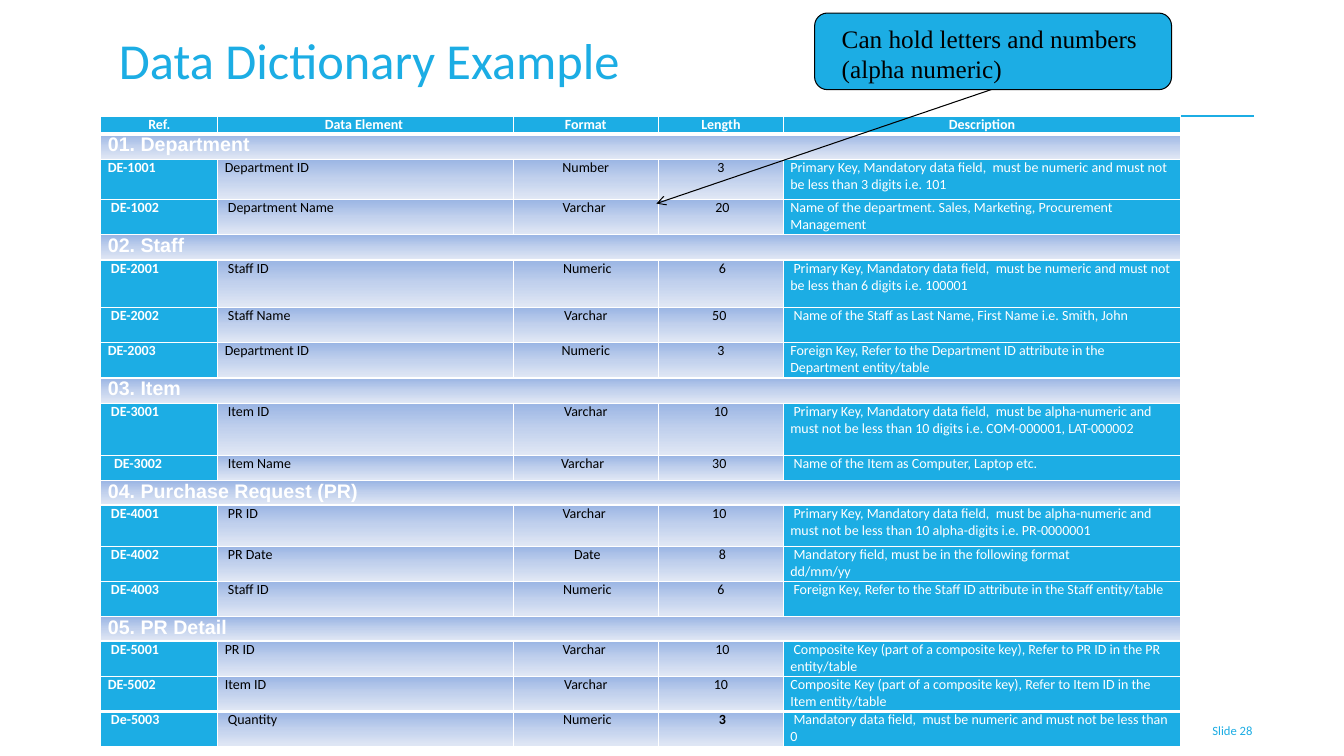
from copy import deepcopy
from dataclasses import dataclass

from lxml import etree
from pptx import Presentation
from pptx import util as u
from pptx.dml.color import RGBColor
from pptx.enum import shapes, text
from pptx.oxml.ns import qn

TITLE = "Data Dictionary Example"
CALLOUT = "Can hold letters and numbers (alpha numeric)"
SLIDE_NUMBER = "Slide 28"
HEADER = ("Ref.", "Data Element ", "Format", "Length", "Description")
ROWS = [
    (18, HEADER),
    (25, ("01. Department",)),
    (40, ("DE-1001", "Department ID", "Number", "3",
          "Primary Key, Mandatory data field,  must be numeric and must not be less than 3 digits i.e. 101")),
    (35, (" DE-1002", " Department Name", "Varchar ", " 20",
          "Name of the department. Sales, Marketing, Procurement Management")),
    (25, ("02. Staff  ",)),
    (47, (" DE-2001", " Staff ID", " Numeric", " 6",
          " Primary Key, Mandatory data field,  must be numeric and must not be less than 6 digits i.e. 100001")),
    (35, (" DE-2002", " Staff Name", " Varchar ", "50 ",
          " Name of the Staff as Last Name, First Name i.e. Smith, John")),
    (35, ("DE-2003", "Department ID", "Numeric", "3",
          "Foreign Key, Refer to the Department ID attribute in the Department entity/table")),
    (25, ("03. Item ",)),
    (52, (" DE-3001", " Item ID", "Varchar", "10",
          " Primary Key, Mandatory data field,  must be alpha-numeric and must not be less than "
          "10 digits i.e. COM-000001, LAT-000002")),
    (25, ("  DE-3002", " Item Name", "Varchar  ", "30 ",
          " Name of the Item as Computer, Laptop etc.")),
    (24, ("04. Purchase Request (PR)",)),
    (41, (" DE-4001", " PR ID", "Varchar ", "10 ",
          " Primary Key, Mandatory data field,  must be alpha-numeric and must not be less than "
          "10 alpha-digits i.e. PR-0000001")),
    (35, (" DE-4002", " PR Date", " Date", " 8",
          " Mandatory field, must be in the following format\ndd/mm/yy")),
    (35, (" DE-4003", " Staff ID", " Numeric", " 6 ",
          " Foreign Key, Refer to the Staff ID attribute in the Staff entity/table")),
    (24, ("05. PR Detail ",)),
    (35, (" DE-5001", "PR ID", "Varchar ", " 10",
          " Composite Key (part of a composite key), Refer to PR ID in the PR entity/table")),
    (35, ("DE-5002", "Item ID", "Varchar", "10",
          "Composite Key (part of a composite key), Refer to Item ID in the Item entity/table")),
    (35, (" De-5003", " Quantity", " Numeric", " 3",
          " Mandatory data field,  must be numeric and must not be less than 0")),
]
COLUMNS = (116, 293, 144, 124, 394)
HEAVY_RULES = (1, len(ROWS) - 1)
BOLD_CELL = (len(ROWS) - 1, 3)


@dataclass(frozen=True)
class Theme:
    blue: str = "1CADE4"
    white: str = "FFFFFF"
    black: str = "000000"
    gradient: tuple = ((0, "9AB5E4"), (0.5, "C2D1ED"), (1, "E1E8F5"))
    font: str = "Calibri"
    section_font: str = "Arial"
    callout_font: str = "Times New Roman"
    title_size: int = 36
    callout_size: int = 18
    section_size: int = 14
    cell_size: int = 10
    number_size: int = 9


THEME = Theme()
SCALE = 9144
ALIGN = text.PP_ALIGN
ANCHOR = text.MSO_ANCHOR


def px(*lengths):
    return [u.Emu(length * SCALE) for length in lengths]


def rgb(color):
    return RGBColor.from_string(color)


def write(frame, words, size=THEME.cell_size, color=THEME.black, font=THEME.font,
          bold=False, align=ALIGN.LEFT):
    for index, line in enumerate(words.split("\n")):
        para = frame.add_paragraph() if index else frame.paragraphs[0]
        para.alignment = align
        span = para.add_run()
        span.text = line
        span.font.size, span.font.name, span.font.bold = u.Pt(size), font, bold
        span.font.color.rgb = rgb(color)


def add_text(parent, bounds, words, anchor=ANCHOR.TOP, **style):
    box = parent.add_textbox(*px(*bounds))
    box.text_frame.word_wrap = True
    box.text_frame.vertical_anchor = anchor
    write(box.text_frame, words, **style)


def add_line(parent, start, end, color, width):
    line = parent.add_connector(shapes.MSO_CONNECTOR.STRAIGHT, *px(*start, *end))
    line.line.color.rgb = rgb(color)
    line.line.width = u.Pt(width)
    etree.SubElement(line._element.spPr, qn("a:effectLst"))
    return line


def fill_gradient(cell):
    cell.fill.gradient()
    cell.fill.gradient_angle = 270
    stops = cell._tc.tcPr.find(".//" + qn("a:gsLst"))
    stops.insert(1, deepcopy(stops[0]))
    for stop, (position, color) in zip(cell.fill.gradient_stops, THEME.gradient):
        stop.position = position
        stop.color.rgb = rgb(color)


def set_borders(cell, row):
    widths = {"lnL": 1, "lnR": 1, "lnT": 3 if row in HEAVY_RULES else 1,
              "lnB": 3 if row + 1 in HEAVY_RULES else 1}
    for index, (side, width) in enumerate(widths.items()):
        border = etree.Element(qn("a:" + side), w=str(u.Pt(width)))
        solid = etree.SubElement(border, qn("a:solidFill"))
        etree.SubElement(solid, qn("a:srgbClr"), val=THEME.white)
        cell._tc.get_or_add_tcPr().insert(index, border)


def format_cell(cell, row, column, words, section):
    header = row == 0
    cell.margin_left, cell.margin_right, cell.margin_top, cell.margin_bottom = px(7, 7, 0, 0)
    solid = header or (not section and column in (0, 4))
    if solid:
        cell.fill.solid()
        cell.fill.fore_color.rgb = rgb(THEME.blue)
    else:
        fill_gradient(cell)
    set_borders(cell, row)
    if section:
        write(cell.text_frame, words, size=THEME.section_size, font=THEME.section_font,
              color=THEME.white, bold=True)
    else:
        write(cell.text_frame, words, color=THEME.white if solid else THEME.black,
              bold=header or column == 0 or (row, column) == BOLD_CELL,
              align=ALIGN.CENTER if header or column in (2, 3) else ALIGN.LEFT)


def add_dictionary(page):
    heights = [height for height, _ in ROWS]
    frame = page.shapes.add_table(len(ROWS), len(COLUMNS),
                                  *px(100, 115, sum(COLUMNS), sum(heights)))
    table = frame.table
    table.horz_banding = False
    for column, width in zip(table.columns, px(*COLUMNS)):
        column.width = width
    for row, (height, words) in enumerate(ROWS):
        table.rows[row].height = px(height)[0]
        section = len(words) == 1
        if section:
            table.cell(row, 0).merge(table.cell(row, len(COLUMNS) - 1))
        for column, value in enumerate(words):
            format_cell(table.cell(row, column), row, column, value, section)


def add_callout(page):
    arrow = add_line(page.shapes, (1068, 60), (651, 202), THEME.black, 0.75)
    etree.SubElement(arrow.line._get_or_add_ln(), qn("a:tailEnd"), type="arrow")
    group = page.shapes.add_group_shape()
    bubble = group.shapes.add_shape(shapes.MSO_SHAPE.ROUNDED_RECTANGLE, *px(808, 13, 354, 76))
    bubble.shadow.inherit = False
    bubble.fill.solid()
    bubble.fill.fore_color.rgb = rgb(THEME.blue)
    bubble.line.color.rgb = rgb(THEME.black)
    bubble.line.width = u.Pt(0.75)
    add_text(group.shapes, (825, 18, 325, 111), CALLOUT, size=THEME.callout_size,
             font=THEME.callout_font)


def main():
    deck = Presentation()
    deck.slide_width, deck.slide_height = px(1333, 750)
    page = deck.slides.add_slide(deck.slide_layouts[5])
    add_line(page.shapes, (100, 115), (1244, 115), THEME.blue, 1)
    title = page.shapes.title
    title.left, title.top, title.width, title.height = px(108, 24, 900, 93)
    title.text_frame.vertical_anchor = ANCHOR.TOP
    title.text_frame.auto_size = text.MSO_AUTO_SIZE.NONE
    write(title.text_frame, TITLE, size=THEME.title_size, color=THEME.blue)
    add_dictionary(page)
    add_text(page.shapes, (1160, 705, 92, 40), SLIDE_NUMBER, anchor=ANCHOR.MIDDLE,
             size=THEME.number_size, color=THEME.blue, align=ALIGN.RIGHT)
    add_callout(page)
    deck.save("out.pptx")


if __name__ == "__main__":
    main()
